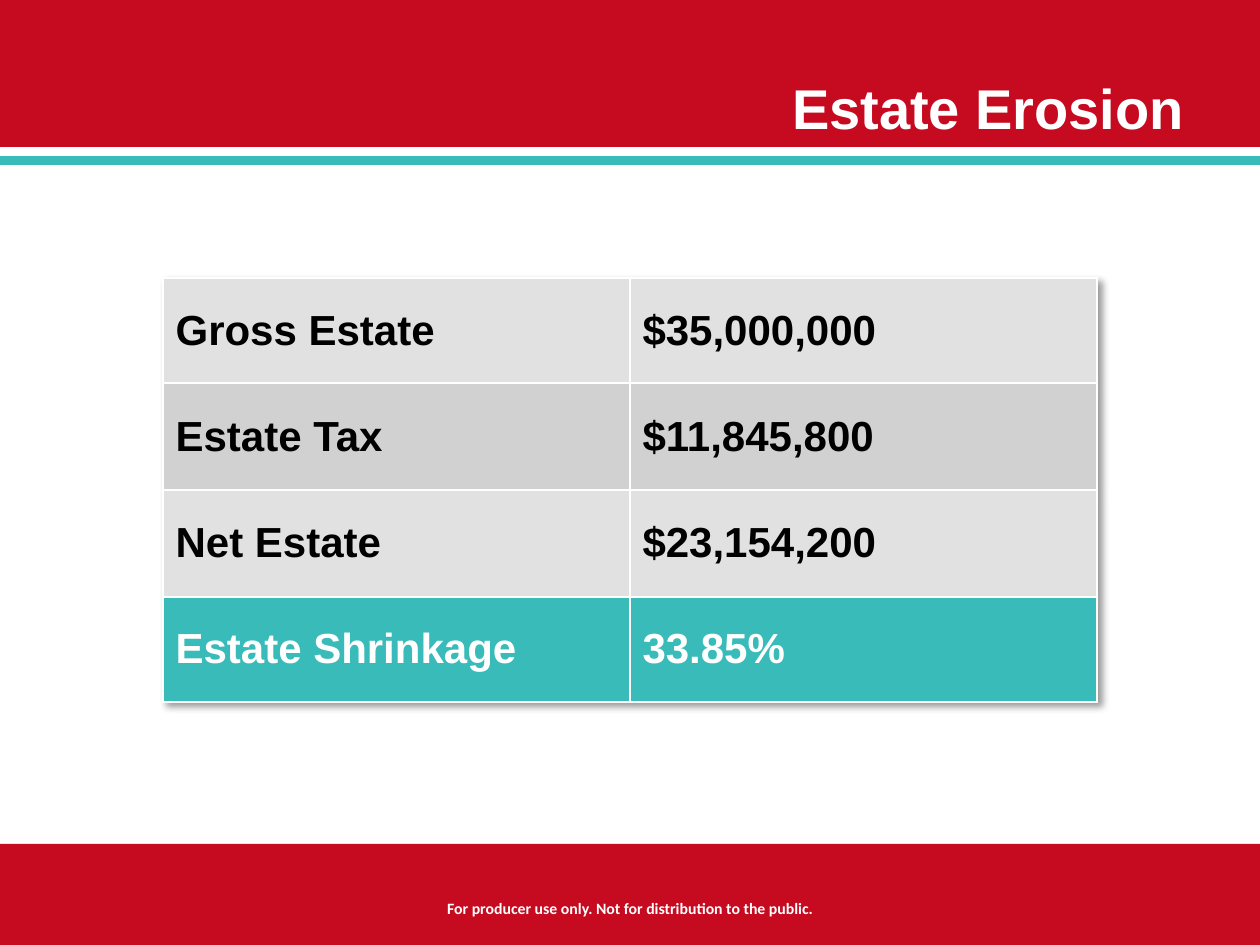
from lxml import etree
from pptx import Presentation
from pptx.dml.color import RGBColor
from pptx.enum.shapes import MSO_SHAPE
from pptx.enum.text import MSO_ANCHOR, PP_ALIGN
from pptx.oxml import parse_xml
from pptx.oxml.ns import qn
from pptx.util import Emu, Pt

RECTANGLE = MSO_SHAPE.RECTANGLE
TOP, MIDDLE, BOTTOM = MSO_ANCHOR.TOP, MSO_ANCHOR.MIDDLE, MSO_ANCHOR.BOTTOM
LEFT, CENTER, RIGHT = PP_ALIGN.LEFT, PP_ALIGN.CENTER, PP_ALIGN.RIGHT

PX = 914400 // 126
SLIDE = (1260, 945)
COLORS = {"red": "C60B20", "teal": "38BBB9", "light": "E1E1E1",
          "mid": "D1D1D1", "white": "FFFFFF", "black": "000000"}

BANDS = [  # left, top, width, height, color
    (0, 0, 1260, 147, "red"),
    (0, 156, 1260, 9, "teal"),
    (0, 844, 1260, 101, "red"),
]
TITLE = "Estate Erosion"
NOTICE = "For producer use only. Not for distribution to the public."
ROWS = [  # label, value, fill, text color, height
    ("Gross Estate", "$35,000,000", "light", "black", 105),
    ("Estate Tax", "$11,845,800", "mid", "black", 107),
    ("Net Estate", "$23,154,200", "light", "black", 107),
    ("Estate Shrinkage", "33.85%", "teal", "white", 105),
]
TABLE_LEFT, TABLE_TOP, COLUMN_WIDTH = 163, 278, 467

TABLE_SHADOW = """
<a:effectLst xmlns:a="http://schemas.openxmlformats.org/drawingml/2006/main">
  <a:outerShdw blurRad="50800" dist="38100" dir="2700000" algn="tl" rotWithShape="0">
    <a:srgbClr val="000000"><a:alpha val="40000"/></a:srgbClr>
  </a:outerShdw>
</a:effectLst>"""


def px(*lengths):
    return [Emu(length * PX) for length in lengths]


def rgb(name):
    return RGBColor.from_string(COLORS[name])


def write(frame, text, size, color="white", font="Arial", align=LEFT):
    para = frame.paragraphs[0]
    para.alignment = align
    span = para.add_run()
    span.text = text
    span.font.size = Pt(size)
    span.font.name = font
    span.font.bold = True
    span.font.color.rgb = rgb(color)


def add_text(slide, place, text, anchor=TOP, **style):
    frame = slide.shapes.add_textbox(*px(*place)).text_frame
    frame.word_wrap = True
    frame.vertical_anchor = anchor
    write(frame, text, **style)


def add_band(slide, place, color):
    band = slide.shapes.add_shape(RECTANGLE, *px(*place))
    band.shadow.inherit = False
    band.fill.solid()
    band.fill.fore_color.rgb = rgb(color)
    band.line.fill.background()


def add_borders(cell, sides):
    properties = cell._tc.get_or_add_tcPr()
    for side in sides:
        line = etree.SubElement(properties, qn(f"a:ln{side}"), w=str(Pt(1)))
        fill = etree.SubElement(line, qn("a:solidFill"))
        etree.SubElement(fill, qn("a:srgbClr"), val=COLORS["white"])


def add_estate_table(slide):
    height = sum(row[-1] for row in ROWS)
    place = px(TABLE_LEFT, TABLE_TOP, 2 * COLUMN_WIDTH, height)
    table = slide.shapes.add_table(len(ROWS), 2, *place).table
    table.first_row = False
    table.horz_banding = False
    table._tbl.tblPr.insert(0, parse_xml(TABLE_SHADOW))
    for column in table.columns:
        column.width = Emu(COLUMN_WIDTH * PX)
    last = len(ROWS) - 1
    for r, (label, value, fill, color, row_height) in enumerate(ROWS):
        table.rows[r].height = Emu(row_height * PX)
        for c, text in enumerate((label, value)):
            cell = table.cell(r, c)
            inner_sides = ("R" if c == 0 else "L") + "T" * (r > 0) + "B" * (r < last)
            add_borders(cell, inner_sides)
            cell.fill.solid()
            cell.fill.fore_color.rgb = rgb(fill)
            cell.vertical_anchor = MIDDLE
            write(cell.text_frame, text, size=24, color=color)


def main():
    deck = Presentation()
    deck.slide_width, deck.slide_height = px(*SLIDE)
    slide = deck.slides.add_slide(deck.slide_layouts[6])
    for *place, color in BANDS:
        add_band(slide, place, color)
    add_text(slide, (379, 893, 502, 32), NOTICE, size=9, font="Calibri", align=CENTER)
    add_text(slide, (63, 5, 1134, 142), TITLE, anchor=BOTTOM, size=32, align=RIGHT)
    add_estate_table(slide)
    deck.save("out.pptx")


if __name__ == "__main__":
    main()
